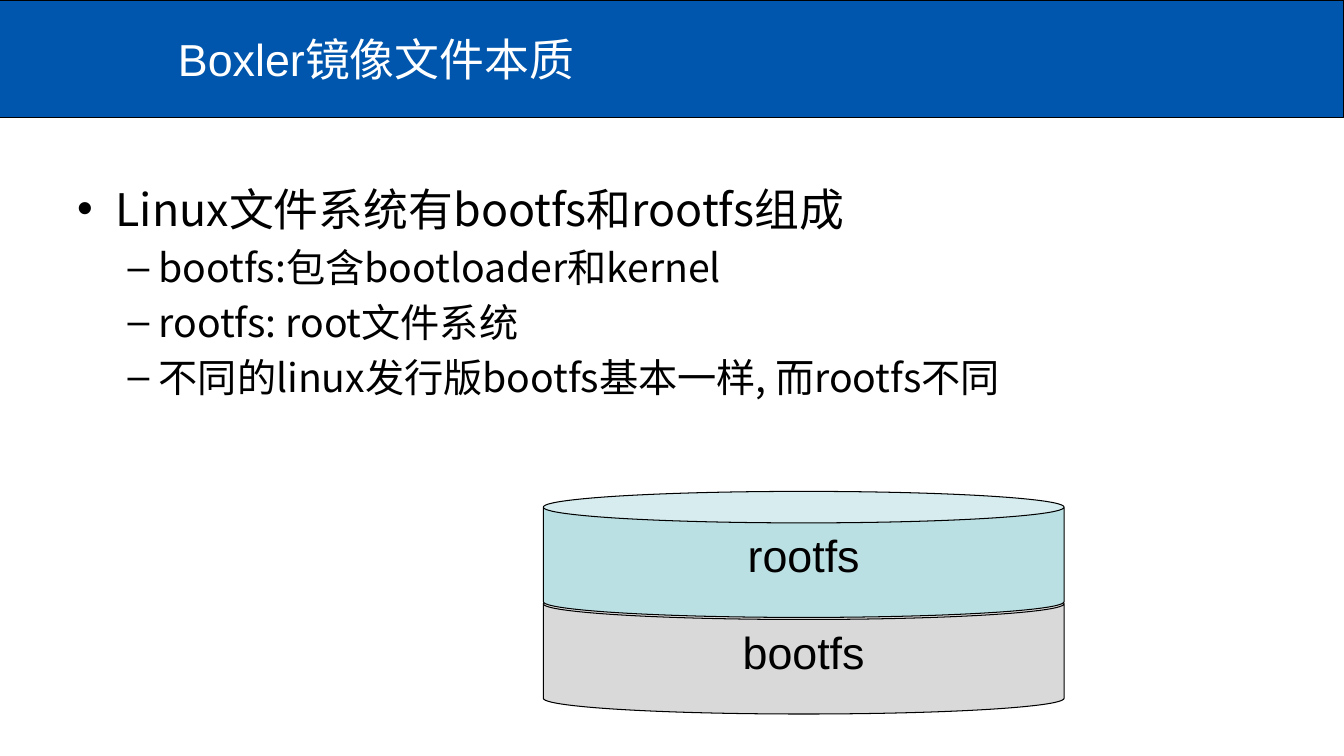
from dataclasses import dataclass

import pptx
import pptx.dml.color
import pptx.enum.shapes
import pptx.enum.text
import pptx.oxml
import pptx.oxml.ns
import pptx.util

# Grid of 80 columns by 90 rows
SLIDE_WIDTH = pptx.util.Inches(13.333)
SLIDE_HEIGHT = pptx.util.Inches(7.5)
COLUMNS, ROWS = 80, 90

BLACK, WHITE = "000000", "FFFFFF"
TITLE_FONT, BODY_FONT = "Arial", "Noto Sans CJK SC"


@dataclass
class Area:
    column: float
    row: float
    columns: float
    rows: float

    def lengths(self) -> tuple[int, int, int, int]:
        return (
            int(SLIDE_WIDTH * self.column / COLUMNS),
            int(SLIDE_HEIGHT * self.row / ROWS),
            int(SLIDE_WIDTH * self.columns / COLUMNS),
            int(SLIDE_HEIGHT * self.rows / ROWS),
        )


@dataclass
class Level:
    bullet: str
    margin: float
    hanging: float
    size: int


@dataclass
class Layer:
    label: str
    fill: str


LEVELS = [Level("•", 0.38, 0.38, 32), Level("–", 0.81, 0.31, 28)]
POINTS = [
    (0, "Linux文件系统有bootfs和rootfs组成"),
    (1, "bootfs:包含bootloader和kernel"),
    (1, "rootfs: root文件系统"),
    (1, "不同的linux发行版bootfs基本一样, 而rootfs不同"),
]

# Layers from the bottom of the stack up
LAYERS = [Layer("bootfs", "D9D9D9"), Layer("rootfs", "BBE0E3")]
BOTTOM_LAYER_ROW, LAYER_STEP = 70, 11.5


def colour(value: str) -> pptx.dml.color.RGBColor:
    return pptx.dml.color.RGBColor.from_string(value)


def style(para, size: int, font: str, value: str) -> None:
    para.font.size = pptx.util.Pt(size)
    para.font.name = font
    para.font.color.rgb = colour(value)


def add_block(page, kind, area: Area, fill: str):
    block = page.shapes.add_shape(kind, *area.lengths())
    block.shadow.inherit = False
    block.fill.solid()
    block.fill.fore_color.rgb = colour(fill)
    block.line.color.rgb = colour(BLACK)
    block.line.width = pptx.util.Pt(0.75)
    return block


def add_text_frame(page, area: Area):
    frame = page.shapes.add_textbox(*area.lengths()).text_frame
    frame.word_wrap = True
    return frame


def set_bullet(para, level: Level) -> None:
    properties = para._p.get_or_add_pPr()
    properties.set("marL", str(pptx.util.Inches(level.margin)))
    properties.set("indent", str(-pptx.util.Inches(level.hanging)))
    namespace = pptx.oxml.ns.nsdecls("a")
    for element in (
        f'<a:buFont {namespace} typeface="Arial"/>',
        f'<a:buChar {namespace} char="{level.bullet}"/>',
    ):
        properties.append(pptx.oxml.parse_xml(element))


def add_title(page, text: str) -> None:
    frame = add_text_frame(page, Area(10, 1, 70, 12))
    frame.vertical_anchor = pptx.enum.text.MSO_ANCHOR.MIDDLE
    para = frame.paragraphs[0]
    para.text = text
    style(para, 32, TITLE_FONT, WHITE)


def add_points(page) -> None:
    frame = add_text_frame(page, Area(4, 21, 72, 59.4))
    for index, (depth, text) in enumerate(POINTS):
        level = LEVELS[depth]
        para = frame.add_paragraph() if index else frame.paragraphs[0]
        para.text = text
        para.level = depth
        set_bullet(para, level)
        if index:
            para.space_before = pptx.util.Pt(level.size * 0.2)
        style(para, level.size, BODY_FONT, BLACK)


def add_layer(page, layer: Layer, row: float) -> None:
    can = add_block(page, pptx.enum.shapes.MSO_SHAPE.CAN, Area(32.34, row, 31, 15), layer.fill)
    can.text_frame.vertical_anchor = pptx.enum.text.MSO_ANCHOR.TOP
    para = can.text_frame.paragraphs[0]
    para.text = layer.label
    para.alignment = pptx.enum.text.PP_ALIGN.CENTER
    style(para, 32, TITLE_FONT, BLACK)


def main() -> None:
    deck = pptx.Presentation()
    deck.slide_width, deck.slide_height = SLIDE_WIDTH, SLIDE_HEIGHT
    page = deck.slides.add_slide(deck.slide_layouts[6])

    # Banner and title
    add_block(page, pptx.enum.shapes.MSO_SHAPE.RECTANGLE, Area(0, 0, COLUMNS, 14), "0056AC")
    add_title(page, "Boxler镜像文件本质")

    # Bulleted points
    add_points(page)

    # Stack of file system layers
    for index, layer in enumerate(LAYERS):
        add_layer(page, layer, BOTTOM_LAYER_ROW - index * LAYER_STEP)

    deck.save("out.pptx")


if __name__ == "__main__":
    main()
